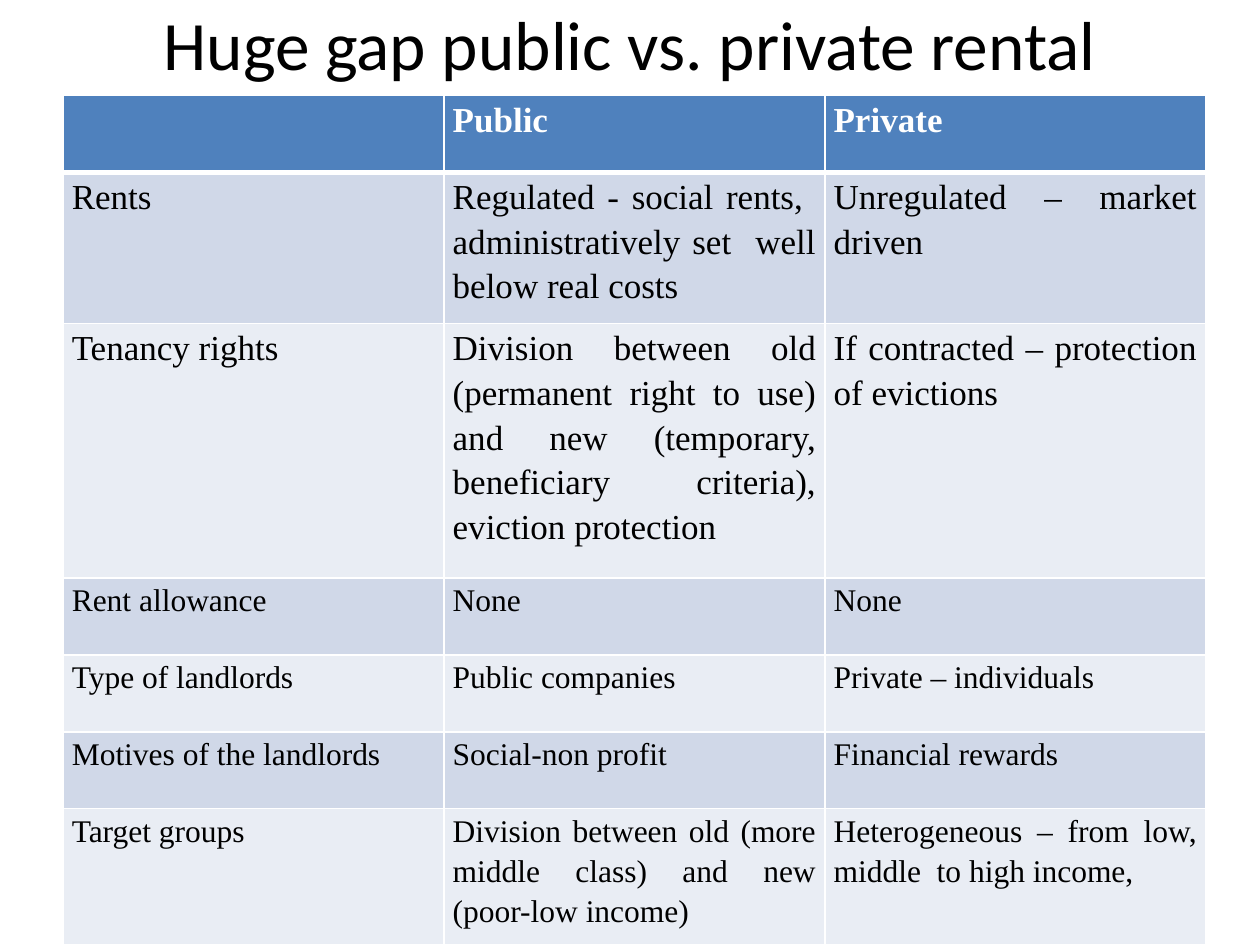
import pptx
import pptx.util
import pptx.dml.color
import pptx.enum.text
import pptx.oxml.ns
import lxml.etree

COLOURS = {
    "header": "4F81BD",
    "odd": "D0D8E8",
    "even": "E9EDF4",
    "light": "FFFFFF",
    "dark": "000000",
}
ROWS = [
    ("", "Public", "Private"),
    ("Rents", "Regulated - social rents,  administratively set  well below real costs",
     "Unregulated – market driven"),
    ("Tenancy rights",
     "Division between old (permanent right to use) and new (temporary, beneficiary criteria), eviction protection",
     "If contracted – protection of evictions"),
    ("Rent allowance", "None", "None"),
    ("Type of landlords", "Public companies", "Private – individuals"),
    ("Motives of the landlords", "Social-non profit", "Financial rewards"),
    ("Target groups", "Division between old (more middle class) and new (poor-low income)",
     "Heterogeneous – from low, middle  to high income,"),
]
ROW_HEIGHTS = [0.61, 1.2, 2.02, 0.61, 0.61, 0.61, 1.08]
LARGE_TEXT_ROWS = 3


def colour(name):
    return pptx.dml.color.RGBColor.from_string(COLOURS[name])


def format_paragraph(paragraph, font_name, size, colour_name, alignment, bold=False):
    paragraph.alignment = alignment
    for run in paragraph.runs:
        run.font.name = font_name
        run.font.size = pptx.util.Pt(size)
        run.font.bold = bold
        run.font.color.rgb = colour(colour_name)


def add_borders(cell, widths):
    properties = cell._tc.get_or_add_tcPr()
    qualified = pptx.oxml.ns.qn
    for position, (side, width) in enumerate(widths.items()):
        line = lxml.etree.Element(qualified(f"a:{side}"), w=str(pptx.util.Pt(width)))
        fill = lxml.etree.SubElement(line, qualified("a:solidFill"))
        lxml.etree.SubElement(fill, qualified("a:srgbClr"), val=COLOURS["light"])
        properties.insert(position, line)


def build_title(slide, left, top, width, height):
    title = slide.shapes.title
    title.left, title.top, title.width, title.height = map(
        pptx.util.Inches, (left, top, width, height))
    frame = title.text_frame
    frame.text = "Huge gap public vs. private rental"
    frame.auto_size = pptx.enum.text.MSO_AUTO_SIZE.NONE
    frame.vertical_anchor = pptx.enum.text.MSO_ANCHOR.MIDDLE
    format_paragraph(frame.paragraphs[0], "Calibri", 39.6, "dark",
                     pptx.enum.text.PP_ALIGN.CENTER)


def fill_cell(cell, text, row_index):
    header = row_index == 0
    cell.fill.solid()
    cell.fill.fore_color.rgb = colour(
        "header" if header else "odd" if row_index % 2 else "even")
    cell.margin_left = cell.margin_right = pptx.util.Inches(0.07)
    cell.margin_top = cell.margin_bottom = 0
    cell.text_frame.text = text
    paragraph = cell.text_frame.paragraphs[0]
    paragraph.line_spacing = 1.15
    format_paragraph(paragraph, "Times New Roman",
                     20 if row_index < LARGE_TEXT_ROWS else 18,
                     "light" if header else "dark",
                     pptx.enum.text.PP_ALIGN.JUSTIFY, header)
    add_borders(cell, {"lnL": 1, "lnR": 1,
                       "lnT": 3 if row_index == 1 else 1,
                       "lnB": 3 if header else 1})


def build_table(slide, left, top, width, height):
    column_count = len(ROWS[0])
    table = slide.shapes.add_table(
        len(ROWS), column_count,
        *map(pptx.util.Inches, (left, top, width, height))).table
    for column in table.columns:
        column.width = pptx.util.Inches(width / column_count)
    for row_index, texts in enumerate(ROWS):
        share = ROW_HEIGHTS[row_index] / sum(ROW_HEIGHTS)
        table.rows[row_index].height = pptx.util.Inches(height * share)
        for column_index, text in enumerate(texts):
            fill_cell(table.cell(row_index, column_index), text, row_index)


def main():
    presentation = pptx.Presentation()
    presentation.slide_width = pptx.util.Inches(10)
    presentation.slide_height = pptx.util.Inches(7.5)
    slide = presentation.slides.add_slide(presentation.slide_layouts[5])
    build_title(slide, 0.5, 0, 9, 0.68)
    build_table(slide, 0.5, 0.76, 9.07, 6.74)
    presentation.save("out.pptx")


if __name__ == "__main__":
    main()
